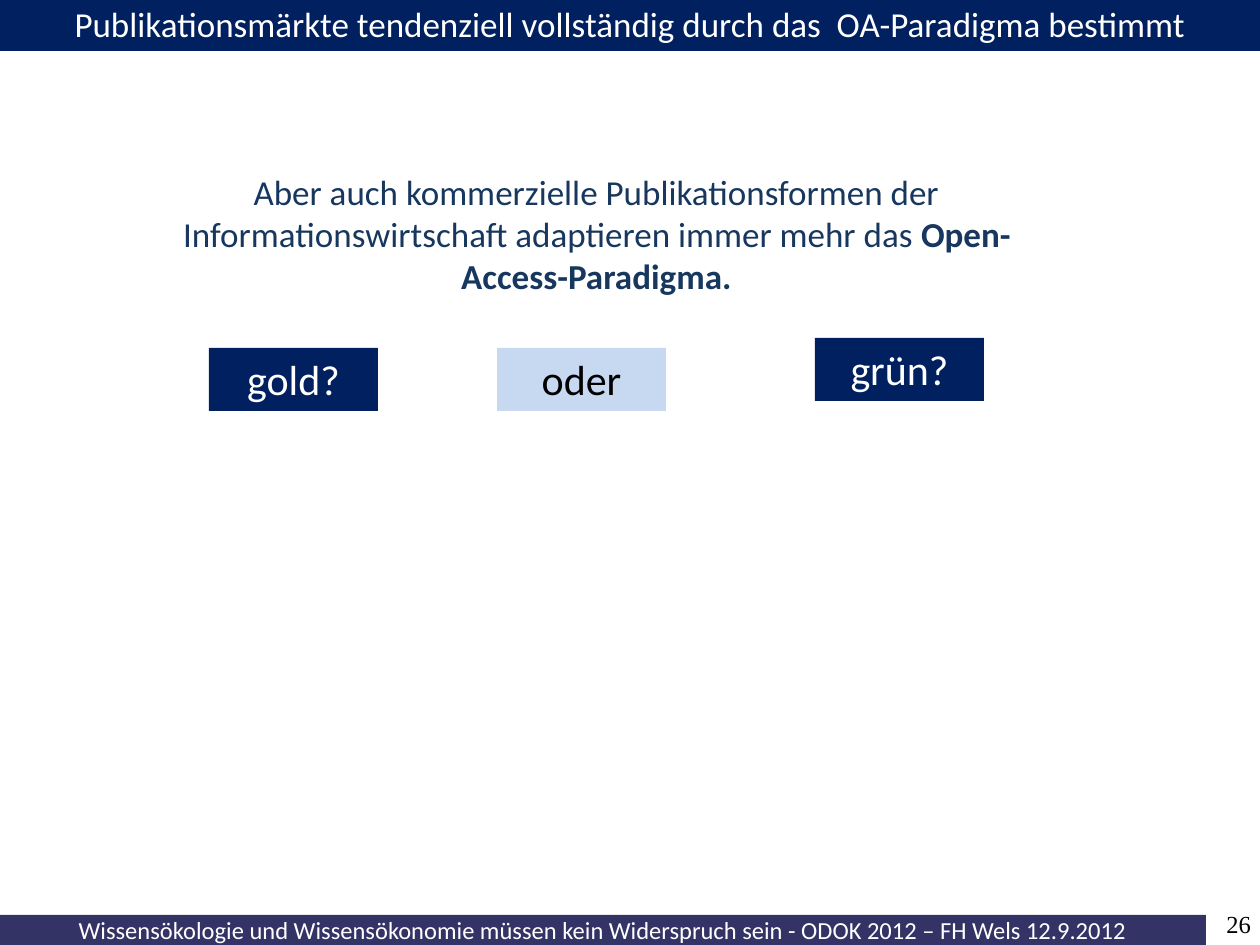
from dataclasses import dataclass

from pptx import Presentation
from pptx.dml.color import RGBColor
from pptx.enum.shapes import MSO_SHAPE
from pptx.enum.text import MSO_ANCHOR, PP_ALIGN
from pptx.util import Pt

PX = 914400 // 126
RECT = MSO_SHAPE.RECTANGLE
CENTER, RIGHT = PP_ALIGN.CENTER, PP_ALIGN.RIGHT
TOP, BOTTOM = MSO_ANCHOR.TOP, MSO_ANCHOR.BOTTOM
INSET_X, INSET_Y = 13, 6


@dataclass(frozen=True)
class Theme:
    font: str = "Calibri"
    number_font: str = "Times New Roman"
    navy: str = "002060"
    footer: str = "333366"
    pale: str = "C6D9F1"
    ink: str = "17375E"
    white: str = "FFFFFF"
    black: str = "000000"
    option_size: int = 24
    body_size: int = 20
    small_size: int = 14


THEME = Theme()


def rgb(value):
    return RGBColor.from_string(value)


def emu(box):
    return [v * PX for v in box]


def write(sp, runs, size, color, font=THEME.font, align=CENTER,
          anchor=TOP, insets=(INSET_X, INSET_Y, INSET_X, INSET_Y)):
    """Fill one paragraph from (text, bold) runs; insets are left, top, right, bottom."""
    tf = sp.text_frame
    tf.word_wrap = True
    tf.vertical_anchor = anchor
    tf.margin_left, tf.margin_top, tf.margin_right, tf.margin_bottom = emu(insets)
    p = tf.paragraphs[0]
    p.alignment = align
    for text, bold in runs:
        r = p.add_run()
        r.text = text
        r.font.name = font
        r.font.size = Pt(size)
        r.font.bold = bold
        r.font.color.rgb = rgb(color)


def add_panel(s, box, fill, line=None):
    sp = s.shapes.add_shape(RECT, *emu(box))
    sp.shadow.inherit = False
    sp.fill.solid()
    sp.fill.fore_color.rgb = rgb(fill)
    if line:
        sp.line.color.rgb = rgb(line)
        sp.line.width = Pt(1)
    else:
        sp.line.fill.background()
    return sp


def add_title(s, box):
    title = "Publikationsmärkte tendenziell vollständig durch das  OA-Paradigma bestimmt"
    write(add_panel(s, box, THEME.navy), [(title, False)], THEME.body_size, THEME.white)


def add_statement(s, box):
    runs = [
        ("Aber auch kommerzielle Publikationsformen der Informationswirtschaft "
         "adaptieren immer mehr das ", False),
        ("Open-Access-Paradigma.", True),
    ]
    write(add_panel(s, box, THEME.white, THEME.white), runs, THEME.body_size, THEME.ink)


def add_options(s, box):
    left, top, width, height = box
    card_w, card_h = 169, 63
    options = [
        ("gold?", 0, height - card_h, THEME.navy, THEME.white),
        ("oder", 288, height - card_h, THEME.pale, THEME.black),
        ("grün?", width - card_w, 0, THEME.navy, THEME.white),
    ]
    for text, dx, dy, fill, color in options:
        sp = add_panel(s, (left + dx, top + dy, card_w, card_h), fill)
        write(sp, [(text, False)], THEME.option_size, color)


def add_footer(s, box):
    left, top, width, height = box
    bar_w, number_w, number_h, right_gap = 1206, 86, 66, 9
    bar = add_panel(s, (left, top, bar_w, height), THEME.footer)
    text = ("Wissensökologie und Wissensökonomie müssen kein Widerspruch sein"
            " - ODOK 2012 – FH Wels 12.9.2012")
    write(bar, [(text, False)], THEME.small_size, THEME.white, insets=(0, 0, 0, 0))
    number_box = (left + width - right_gap - number_w, top + height - number_h,
                  number_w, number_h)
    number = s.shapes.add_textbox(*emu(number_box))
    write(number, [("26", False)], THEME.small_size, THEME.black,
          THEME.number_font, RIGHT, BOTTOM, (0, 0, 0, INSET_Y))


def main():
    prs = Presentation()
    prs.slide_width, prs.slide_height = emu((1260, 945))
    s = prs.slides.add_slide(prs.slide_layouts[6])
    add_footer(s, (0, 915, 1260, 30))
    add_title(s, (0, -4, 1260, 55))
    add_options(s, (209, 338, 775, 73))
    add_statement(s, (166, 165, 861, 140))
    prs.save("out.pptx")


if __name__ == "__main__":
    main()
